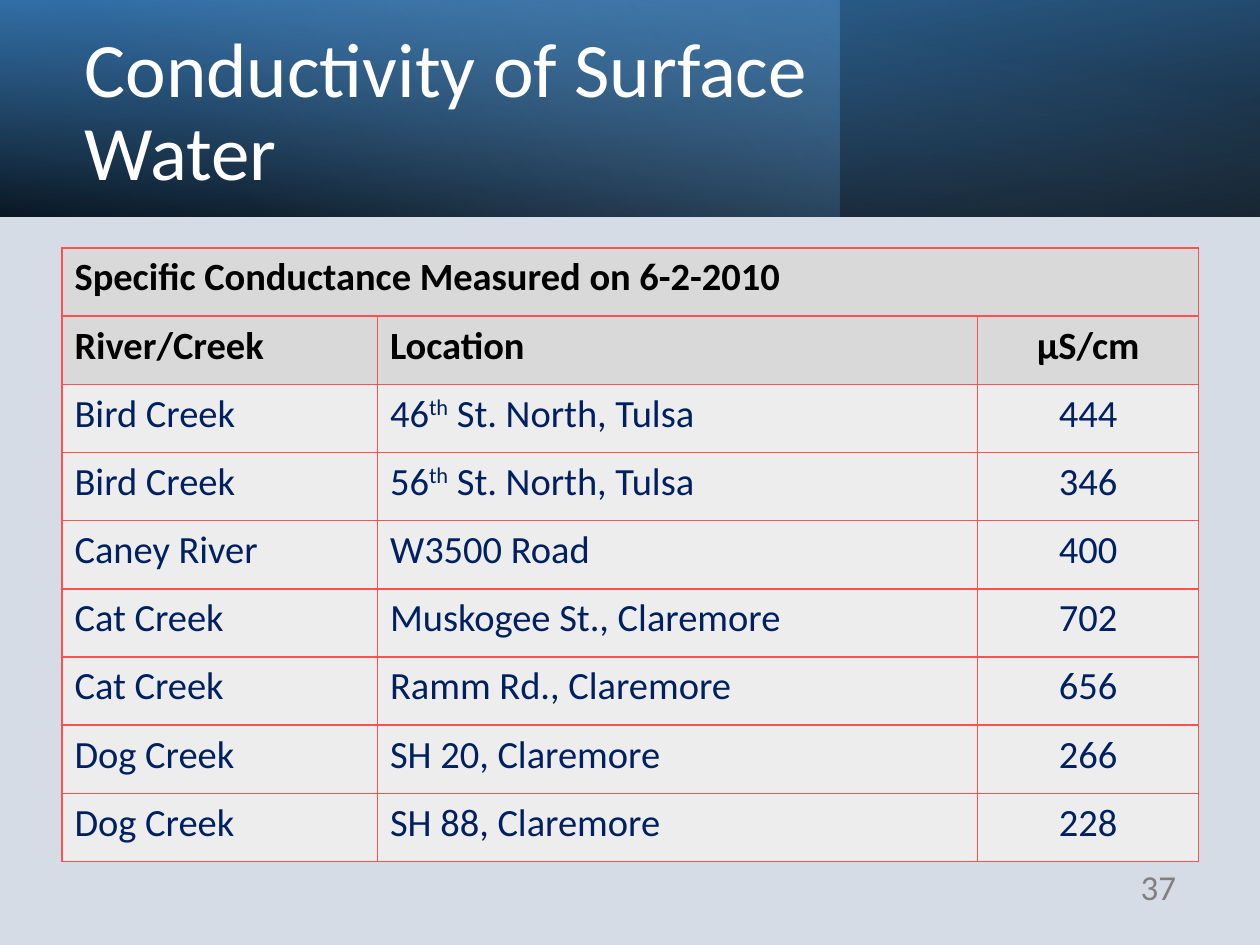
from lxml import etree
from pptx import Presentation
from pptx import util as u
from pptx.dml import color
from pptx.enum import shapes, text
from pptx.oxml import ns

COLOURS = {
    "page": "D6DCE5", "black": "000000", "navy": "002060", "white": "FFFFFF",
    "grey": "808080", "heading": "D9D9D9", "body": "EDEDED", "border": "FF5050",
    "deep": "2E75B6", "sky": "5B9BD5", "pale": "9DC3E6",
}
LEFT, CENTRE, RIGHT = text.PP_ALIGN.LEFT, text.PP_ALIGN.CENTER, text.PP_ALIGN.RIGHT
HEADINGS = [
    ("Specific Conductance Measured on 6-2-2010", "", ""),
    ("River/Creek", "Location", "µS/cm"),
]
READINGS = [
    ("Bird Creek", "46^th^ St. North, Tulsa", "444"),
    ("Bird Creek", "56^th^ St. North, Tulsa", "346"),
    ("Caney River", "W3500 Road", "400"),
    ("Cat Creek", "Muskogee St., Claremore", "702"),
    ("Cat Creek", "Ramm Rd., Claremore", "656"),
    ("Dog Creek", "SH 20, Claremore", "266"),
    ("Dog Creek", "SH 88, Claremore", "228"),
]


def rgb(name):
    """Return a named colour."""
    return color.RGBColor.from_string(COLOURS[name])


def add_child(parent, tag, **attributes):
    """Append a DrawingML element with the given attributes."""
    values = {key: str(value) for key, value in attributes.items()}
    return etree.SubElement(parent, ns.qn(tag), values)


def write(para, content, colour, size, align=LEFT, bold=False):
    """Fill a paragraph, raising any text between carets."""
    para.alignment = align
    for index, part in enumerate(content.split("^")):
        span = para.add_run()
        span.text = part
        formats = {"name": "Calibri", "size": u.Pt(size), "bold": bold}
        for key, value in formats.items():
            setattr(span.font, key, value)
        span.font.color.rgb = rgb(colour)
        if index % 2:
            span.font._element.set("baseline", "30000")


def add_band(page, width, angle, stops, flip=False, rotation=0):
    """Add a header band with a translucent gradient."""
    band = page.shapes.add_shape(
        shapes.MSO_SHAPE.RECTANGLE, 0, 0, u.Cm(width), u.Cm(4.37))
    band.shadow.inherit = False
    band.line.fill.background()
    band.rotation = rotation
    properties = band.element.spPr
    if flip:
        properties.find(ns.qn("a:xfrm")).set("flipH", "1")
    gradient = etree.Element(ns.qn("a:gradFill"), rotWithShape="1")
    stop_list = add_child(gradient, "a:gsLst")
    for position, name, opacity in stops:
        stop = add_child(stop_list, "a:gs", pos=position * 1000)
        tint = add_child(stop, "a:srgbClr", val=COLOURS[name])
        add_child(tint, "a:alpha", val=opacity * 1000)
    add_child(gradient, "a:lin", ang=angle * 60000, scaled=0)
    properties.find(ns.qn("a:prstGeom")).addnext(gradient)


def add_title(page, content):
    """Place the title placeholder above the header bands."""
    title = page.shapes.title
    title.element.getparent().append(title.element)
    place = {"left": 1.45, "top": 0.69, "width": 15.47, "height": 3.23}
    for key, value in place.items():
        setattr(title, key, u.Cm(value))
    title.text_frame.word_wrap = True
    title.text_frame.auto_size = text.MSO_AUTO_SIZE.NONE
    title.text_frame.vertical_anchor = text.MSO_ANCHOR.MIDDLE
    para = title.text_frame.paragraphs[0]
    para.line_spacing = 0.9
    write(para, content, "white", 44)


def add_page_number(page, number):
    """Add the page number at the lower right."""
    box = page.shapes.add_textbox(u.Cm(22.28), u.Cm(17.37), u.Cm(1.68), u.Cm(1.02))
    box.text_frame.word_wrap = True
    box.text_frame.vertical_anchor = text.MSO_ANCHOR.MIDDLE
    para = box.text_frame.paragraphs[0]
    para.space_after = u.Pt(6)
    write(para, number, "grey", 20, RIGHT)


def format_cell(cell, fill):
    """Give a cell its borders and fill."""
    properties = cell._tc.get_or_add_tcPr()
    for side in ("a:lnL", "a:lnR", "a:lnT", "a:lnB"):
        line = add_child(properties, side, w=u.Pt(1))
        solid = add_child(line, "a:solidFill")
        add_child(solid, "a:srgbClr", val=COLOURS["border"])
    cell.fill.solid()
    cell.fill.fore_color.rgb = rgb(fill)


def add_readings(page):
    """Add the conductance table."""
    rows = HEADINGS + READINGS
    table = page.shapes.add_table(
        len(rows), 3, u.Cm(1.25), u.Cm(5), u.Cm(22.91), u.Cm(12.37)).table
    table.first_row = table.horz_banding = False
    for column, width in zip(table.columns, (6.36, 12.1, 4.45)):
        column.width = u.Cm(width)
    table.cell(0, 0).merge(table.cell(0, 2))
    for row, values in enumerate(rows):
        heading = row < len(HEADINGS)
        for column, content in enumerate(values):
            cell = table.cell(row, column)
            format_cell(cell, "heading" if heading else "body")
            if content:
                write(cell.text_frame.paragraphs[0], content,
                      "black" if heading else "navy", 22,
                      CENTRE if column == 2 else LEFT, heading)


def main():
    """Build and save the slide."""
    deck = Presentation()
    deck.slide_width, deck.slide_height = u.Cm(25.4), u.Cm(19.05)
    page = deck.slides.add_slide(deck.slide_layouts[5])
    page.background.fill.solid()
    page.background.fill.fore_color.rgb = rgb("page")
    add_band(page, 25.4, 100, [(0, "black", 96), (100, "deep", 100)], True, 180)
    add_band(page, 16.93, 140, [(0, "sky", 41), (74, "pale", 0)])
    add_band(page, 25.4, 260, [(0, "black", 63), (78, "sky", 15)], True)
    add_title(page, "Conductivity of Surface Water")
    add_page_number(page, "37")
    add_readings(page)
    deck.save("out.pptx")


if __name__ == "__main__":
    main()
